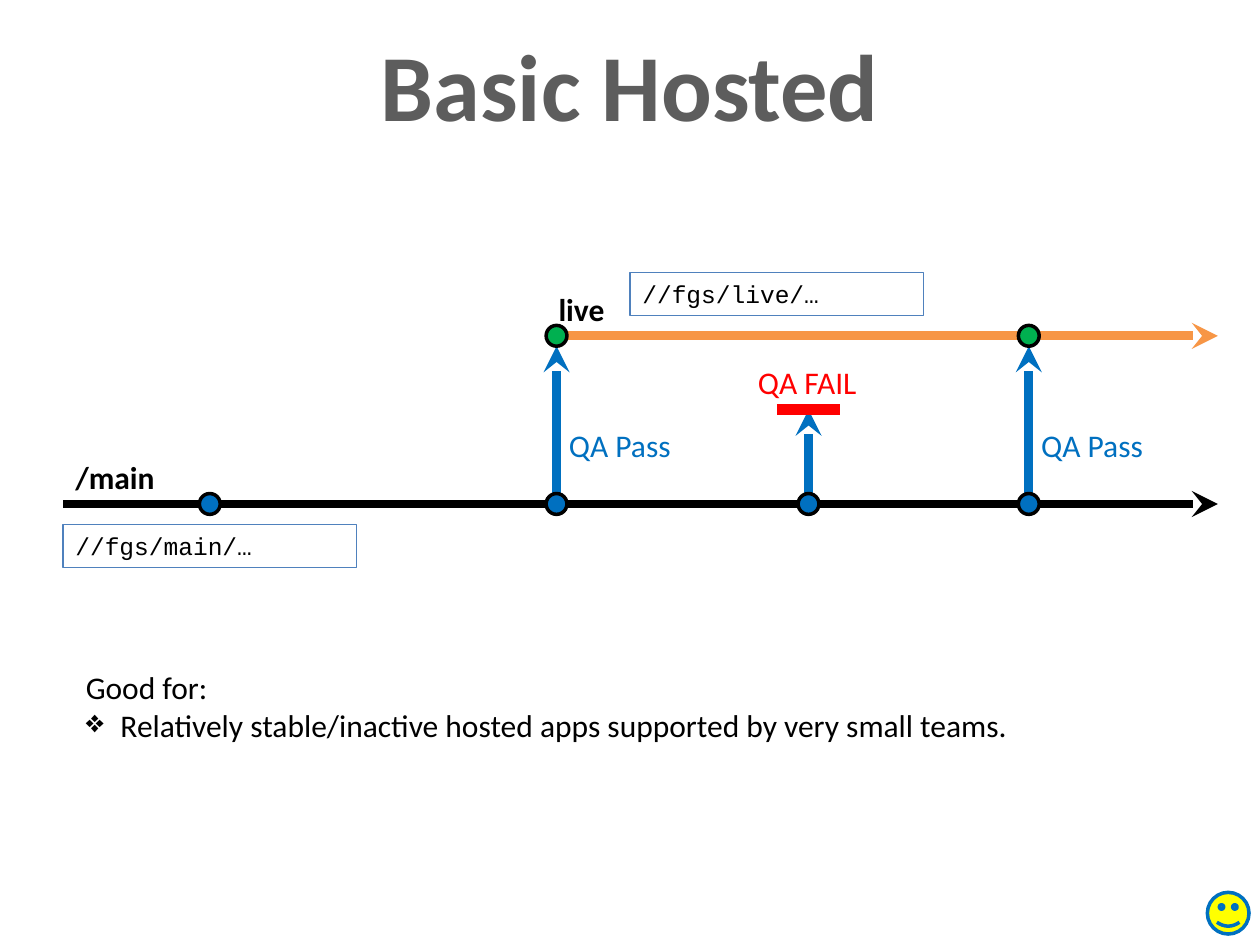
from typing import NamedTuple, Optional

from lxml import etree
from pptx import Presentation
from pptx.dml.color import RGBColor
from pptx.enum.shapes import MSO_CONNECTOR, MSO_SHAPE
from pptx.enum.text import PP_ALIGN
from pptx.oxml.ns import qn
from pptx.util import Cm, Pt

STRAIGHT = MSO_CONNECTOR.STRAIGHT
OVAL = MSO_SHAPE.OVAL
SMILEY = MSO_SHAPE.SMILEY_FACE
LEFT, CENTER = PP_ALIGN.LEFT, PP_ALIGN.CENTER

BLACK = RGBColor(0x00, 0x00, 0x00)
WHITE = RGBColor(0xFF, 0xFF, 0xFF)
GRAY = RGBColor(0x5D, 0x5D, 0x5D)
BLUE = RGBColor(0x00, 0x70, 0xC0)
STEEL = RGBColor(0x4F, 0x81, 0xBD)
GREEN = RGBColor(0x00, 0xB0, 0x50)
ORANGE = RGBColor(0xF7, 0x96, 0x46)
RED = RGBColor(0xFF, 0x00, 0x00)
YELLOW = RGBColor(0xFF, 0xFF, 0x00)

# Branch levels, commit columns and dot radius, in centimetres
LIVE, FAIL, MAIN = 6.77, 8.26, 10.16
START, EDIT, PASS, MISS, AGAIN, END = 1.27, 4.23, 11.22, 16.3, 20.74, 24.55
RAD = 0.21


class Line(NamedTuple):
    x1: float
    y1: float
    x2: float
    y2: float
    color: RGBColor
    width: float = 5
    arrow: bool = True


class Dot(NamedTuple):
    x: float
    y: float
    fill: RGBColor
    line: RGBColor = BLACK
    rad: float = RAD
    kind: int = OVAL


class Label(NamedTuple):
    text: str
    x: float
    y: float
    w: float
    h: float = 1.02
    color: RGBColor = BLACK
    size: float = 18
    bold: bool = False
    font: str = "Calibri"
    align: int = LEFT
    fill: Optional[RGBColor] = None
    line: Optional[RGBColor] = None
    wrap: bool = True


def path_box(text: str, x: float, y: float) -> Label:
    """Describe a framed box that holds a depot location."""
    return Label(text, x, y, 5.92, 0.86, size=14, font="Courier New",
                 fill=WHITE, line=STEEL)


def qa_note(text: str, x: float, y: float, color: RGBColor) -> Label:
    return Label(text, x, y, 2.59, color=color, wrap=False)


LINES = [
    Line(PASS, MAIN, PASS, LIVE + RAD, BLUE),
    Line(AGAIN, MAIN, AGAIN, LIVE + RAD, BLUE),
    Line(MISS, MAIN, MISS, FAIL, BLUE),
    Line(START, MAIN, END, MAIN, BLACK),
    Line(PASS + RAD, LIVE, END, LIVE, ORANGE),
    Line(MISS - 0.64, FAIL, MISS + 0.64, FAIL, RED, 6, False),
]
DOTS = [
    *(Dot(x, MAIN, BLUE) for x in (EDIT, PASS, MISS, AGAIN)),
    *(Dot(x, LIVE, GREEN) for x in (PASS, AGAIN)),
    Dot(24.76, 18.41, YELLOW, BLUE, 0.42, SMILEY),
]
TAGS = [
    Label("/main", START, 9.1, 2.75, bold=True, fill=WHITE),
    Label("live", 11.01, 5.72, 2.75, bold=True, fill=WHITE),
]
LABELS = [
    *(qa_note("QA Pass", x, 8.47, BLUE) for x in (PASS, AGAIN)),
    qa_note("QA FAIL", 15.03, 7.2, RED),
    Label("Basic Hosted", 0, 0.42, 25.4, 2.57, GRAY, 54, True, align=CENTER),
    path_box("//fgs/main/…", START, 10.58),
    path_box("//fgs/live/…", 12.7, 5.5),
]
GOOD = Label("Good for:", 1.48, 13.34, 19.4, 1.8, wrap=False)
POINT = "Relatively stable/inactive hosted apps supported by very small teams."


def draw_line(slide, it: Line) -> None:
    ends = (Cm(v) for v in it[:4])
    link = slide.shapes.add_connector(STRAIGHT, *ends)
    link.line.color.rgb = it.color
    link.line.width = Pt(it.width)
    if it.arrow:
        etree.SubElement(link.line._get_or_add_ln(), qn("a:tailEnd"),
                         type="stealth")
    etree.SubElement(link._element.spPr, qn("a:effectLst"))


def draw_dot(slide, it: Dot) -> None:
    size = Cm(2 * it.rad)
    dot = slide.shapes.add_shape(
        it.kind, Cm(it.x - it.rad), Cm(it.y - it.rad), size, size)
    dot.shadow.inherit = False
    dot.fill.solid()
    dot.fill.fore_color.rgb = it.fill
    dot.line.color.rgb = it.line
    dot.line.width = Pt(2)


def add_run(para, text: str, it: Label) -> None:
    run = para.add_run()
    run.text = text
    run.font.name = it.font
    run.font.size = Pt(it.size)
    run.font.bold = it.bold
    run.font.color.rgb = it.color


def draw_label(slide, it: Label):
    """Draw the label and return its text frame."""
    box = slide.shapes.add_textbox(Cm(it.x), Cm(it.y), Cm(it.w), Cm(it.h))
    if it.fill is not None:
        box.fill.solid()
        box.fill.fore_color.rgb = it.fill
    if it.line is not None:
        box.line.color.rgb = it.line
        box.line.width = Pt(0.75)
    frame = box.text_frame
    frame.word_wrap = it.wrap
    para = frame.paragraphs[0]
    para.alignment = it.align
    add_run(para, it.text, it)
    return frame


def add_point(frame, text: str, it: Label) -> None:
    """Add a bulleted paragraph in the style of the label."""
    para = frame.add_paragraph()
    props = para._p.get_or_add_pPr()
    props.set("marL", str(Cm(0.7)))
    props.set("indent", str(-Cm(0.7)))
    etree.SubElement(props, qn("a:buChar"), char="❖")
    add_run(para, text, it)


def main() -> None:
    deck = Presentation()
    deck.slide_width, deck.slide_height = Cm(25.4), Cm(19.05)
    slide = deck.slides.add_slide(deck.slide_layouts[6])
    for tag in TAGS:
        draw_label(slide, tag)
    for line in LINES:
        draw_line(slide, line)
    for dot in DOTS:
        draw_dot(slide, dot)
    for label in LABELS:
        draw_label(slide, label)
    add_point(draw_label(slide, GOOD), POINT, GOOD)
    deck.save("out.pptx")


if __name__ == "__main__":
    main()
